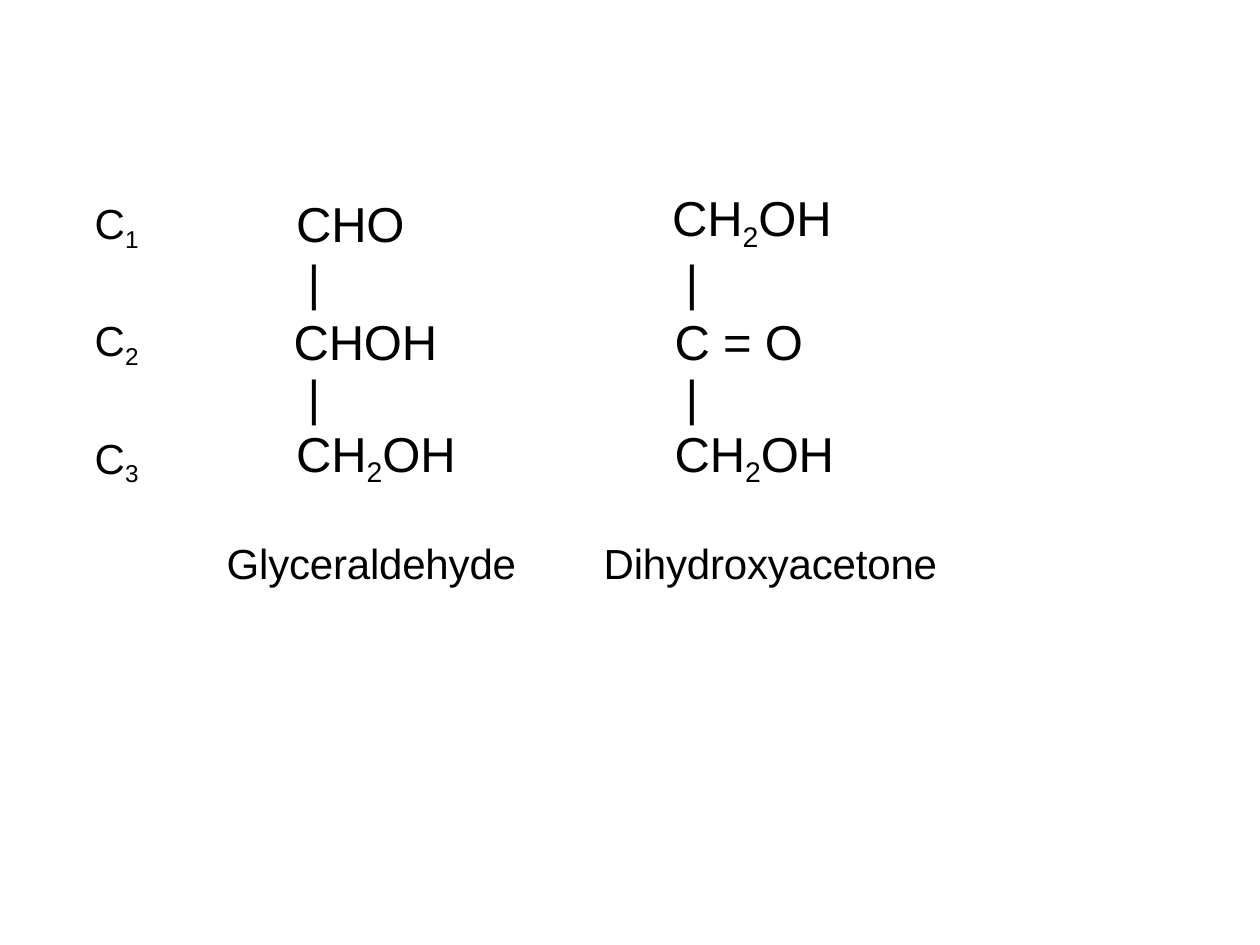
from dataclasses import dataclass
from itertools import groupby

from pptx import Presentation
from pptx import util as u
from pptx.dml import color


@dataclass
class Theme:
    font: str = "Arial"
    ink: color.RGBColor = color.RGBColor(0, 0, 0)
    label: int = 24
    atom: int = 28
    plain: str = "{2D5ABB26-0587-4C30-8999-92F81FD0307C}"


class Deck:
    """Hold the theme and the current slide, and draw its elements."""

    def __init__(self, theme):
        self.theme = theme
        self.show = Presentation()
        self.show.slide_width, self.show.slide_height = u.Cm(25.4), u.Cm(19.05)
        self.slide = self.show.slides.add_slide(self.show.slide_layouts[6])

    def grid(self, left, top, cols, rows):
        frame = self.slide.shapes.add_table(
            len(rows), len(cols), u.Cm(left), u.Cm(top), u.Cm(sum(cols)), u.Cm(sum(rows)))
        table = frame.table
        table.first_row = table.horz_banding = False
        table._tbl.tblPr[0].text = self.theme.plain
        for col, width in zip(table.columns, cols):
            col.width = u.Cm(width)
        for row, height in zip(table.rows, rows):
            row.height = u.Cm(height)
        for cell in table.iter_cells():
            cell.fill.background()
            cell.margin_left = cell.margin_right = cell.margin_bottom = cell.margin_top = 0
        return table

    def cell(self, cell, top, size, lines):
        cell.margin_top = u.Cm(top)
        body = cell.text_frame
        for pos, (words, indent, lead) in enumerate(lines):
            para = body.add_paragraph() if pos else body.paragraphs[0]
            self.line(para, words, indent, lead, size)

    def line(self, para, words, indent, lead, size):
        props = para._p.get_or_add_pPr()
        props.set("marL", str(u.Cm(indent)))
        props.set("indent", "0")
        if lead:
            para.line_spacing = u.Pt(lead)
        for low, part in groupby(words, str.isdigit):
            run = para.add_run()
            run.text = "".join(part)
            font = run.font
            font.name, font.size = self.theme.font, u.Pt(size)
            font.color.rgb = self.theme.ink
            marks = run._r.get_or_add_rPr()
            if words != "|":
                marks.set("spc", "-10")
            if low:
                marks.set("baseline", "-21000")


LABELS = [("C1", 0.05), ("C2", 0.13), ("C3", 0.08)]
SUGARS = [
    ("Glyceraldehyde", 0.91, 2.54, [("CHO", 2.31), ("CHOH", 2.26), ("CH2OH", 2.31)]),
    ("Dihydroxyacetone", 0.86, 2.51, [("CH2OH", 2.24), ("C = O", 2.29), ("CH2OH", 2.29)]),
]
LEADS = [(30.9, 33), (33.3, None), (32.1, None)]


def main():
    theme = Theme()
    deck = Deck(theme)
    table = deck.grid(1.83, 4.01, [1.83, 7.65, 7.72], [2.29, 2.41, 1.78, 1.4])
    for row, (label, top) in enumerate(LABELS):
        deck.cell(table.cell(row, 0), top, theme.label, [(label, 0.08, None)])
    for col, (name, inset, bond, groups) in enumerate(SUGARS, 1):
        for row, ((group, indent), (lead, gap)) in enumerate(zip(groups, LEADS)):
            lines = [(group, indent, lead)]
            if row < len(groups) - 1:
                lines.append(("|", bond, gap))
            deck.cell(table.cell(row, col), 0, theme.atom, lines)
        deck.cell(table.cell(len(groups), col), 0.38, theme.label, [(name, inset, 28.1)])
    deck.show.save("out.pptx")


if __name__ == "__main__":
    main()
